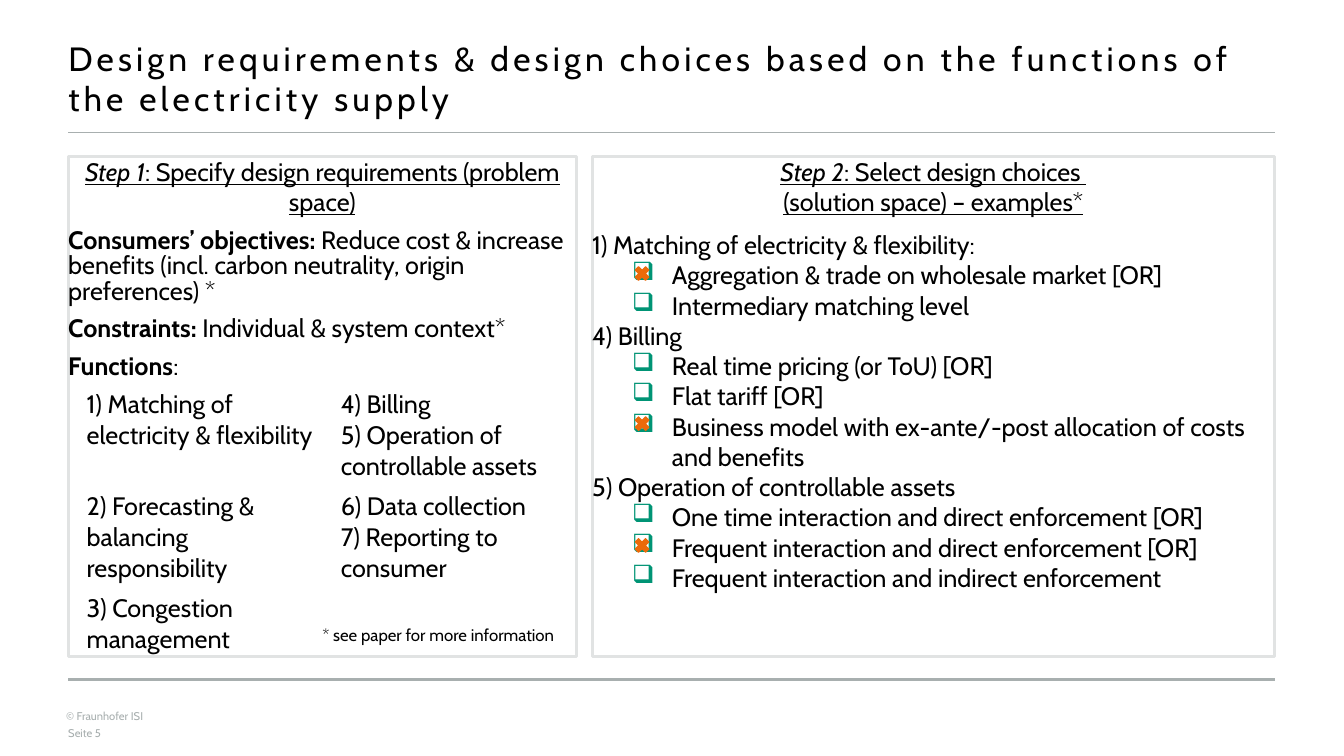
from lxml import etree
from pptx import Presentation
from pptx import util as u
from pptx.dml.color import RGBColor
from pptx.enum import shapes, text
from pptx.oxml import ns

PX = 9525
COLORS = {"ink": "000000", "grey": "A8AFAF", "frame": "E1E3E3",
          "white": "FFFFFF", "box": "009475", "cross": "EB6A0A"}
CENTER = text.PP_ALIGN.CENTER


class Board:
    """Hold the style and the current slide and draw each kind of element."""

    def __init__(self, slide, font="Cabin"):
        self.slide, self.font = slide, font

    def color(self, key):
        return RGBColor.from_string(COLORS[key])

    def place(self, *lengths):
        return [u.Emu(n * PX) for n in lengths]

    def frame(self, owner, anchor=text.MSO_ANCHOR.TOP):
        body = owner.text_frame
        body.word_wrap = True
        body.vertical_anchor = anchor
        body.margin_left = body.margin_top = body.margin_right = body.margin_bottom = 0
        return body

    def paragraph(self, body, runs, size=18, color="ink", align=text.PP_ALIGN.LEFT,
                  after=0, line=None, spacing=0, bullet=False):
        first = body.paragraphs[0]
        para = body.add_paragraph() if first.runs else first
        if bullet:
            self.checkbox(para)
        para.alignment = align
        if after:
            para.space_after = u.Pt(after)
        if line:
            para.line_spacing = u.Pt(line)
        for words, style in runs:
            for index, part in enumerate(words.split("\n")):
                if index:
                    para.add_line_break()
                run = para.add_run()
                run.text = part
                run.font.name, run.font.size = self.font, u.Pt(size)
                run.font.color.rgb = self.color(color)
                run.font.bold = "b" in style
                run.font.italic = "i" in style
                run.font.underline = "u" in style
                if spacing:
                    run.font._element.set("spc", str(spacing * 100))

    def checkbox(self, para):
        para.level = 1
        props = para._p.get_or_add_pPr()
        props.set("marL", str(76 * PX))
        props.set("indent", str(-38 * PX))
        tint = etree.SubElement(props, ns.qn("a:buClr"))
        etree.SubElement(tint, ns.qn("a:srgbClr")).set("val", COLORS["box"])
        etree.SubElement(props, ns.qn("a:buChar")).set("char", "❑")

    def label(self, area, words, anchor=text.MSO_ANCHOR.TOP, **style):
        box = self.slide.shapes.add_textbox(*self.place(*area))
        self.paragraph(self.frame(box, anchor), [(words, "")], **style)

    def rule(self, y, weight, left=65, right=1214):
        line = self.slide.shapes.add_connector(
            shapes.MSO_CONNECTOR.STRAIGHT, *self.place(left, y, right, y))
        line.line.color.rgb, line.line.width = self.color("grey"), u.Pt(weight)
        etree.SubElement(line._element.spPr, ns.qn("a:effectLst"))

    def shape(self, kind, area, fill, edge, weight):
        drawn = self.slide.shapes.add_shape(kind, *self.place(*area))
        drawn.shadow.inherit = False
        drawn.fill.solid()
        drawn.fill.fore_color.rgb = self.color(fill)
        drawn.line.color.rgb, drawn.line.width = self.color(edge), u.Pt(weight)
        return drawn

    def panel(self, area, step, heading):
        drawn = self.shape(shapes.MSO_SHAPE.RECTANGLE, area, "white", "frame", 2)
        body = self.frame(drawn)
        self.paragraph(body, [(step, "iu"), (heading, "u")], align=CENTER, after=9)
        return body

    def table(self, left, top, width, heights, rows):
        frame = self.slide.shapes.add_table(
            len(rows), len(rows[0]), *self.place(left, top, width, sum(heights)))
        grid = frame.table
        grid.first_row = grid.horz_banding = False
        style = grid._tbl.tblPr.find(ns.qn("a:tableStyleId"))
        style.text = "{2D5ABB26-0587-4C30-8999-92F81FD0307C}"
        for row, height, entries in zip(grid.rows, heights, rows):
            row.height = u.Emu(height * PX)
            for cell, lines in zip(row.cells, entries):
                cell.fill.background()
                for words in lines:
                    self.paragraph(cell.text_frame, [(words, "")])


REQUIREMENTS = [
    ("Consumers’ objectives: ",
     "Reduce cost & increase benefits (incl. carbon neutrality, origin preferences) *"),
    ("Constraints: ", "Individual & system context*"),
    ("Functions", ":"),
]
FUNCTIONS = [
    [["1) Matching of electricity & flexibility"],
     ["4) Billing", "5) Operation of controllable assets"]],
    [["2) Forecasting & balancing responsibility"],
     ["6) Data collection", "7) Reporting to consumer"]],
    [["3) Congestion management"], []],
]
CHOICES = {
    "1) Matching of electricity & flexibility:": [
        "Aggregation & trade on wholesale market [OR]",
        "Intermediary matching level"],
    "4) Billing": [
        "Real time pricing (or ToU) [OR]",
        "Flat tariff [OR]",
        "Business model with ex-ante/-post allocation of costs and benefits"],
    "5) Operation of controllable assets": [
        "One time interaction and direct enforcement [OR]",
        "Frequent interaction and direct enforcement [OR]",
        "Frequent interaction and indirect enforcement"],
}


def main():
    deck = Presentation()
    deck.slide_width, deck.slide_height = u.Emu(1280 * PX), u.Emu(720 * PX)
    board = Board(deck.slides.add_slide(deck.slide_layouts[6]))

    board.label((63, 676, 126, 12), "© Fraunhofer ISI", size=8, color="grey")
    board.rule(647, 2.5)
    board.rule(126, 1)
    board.label((65, 692, 252, 12), "Seite 5", size=8, color="grey")
    board.label((65, 36, 1149, 78),
                "Design requirements & design choices based on the functions of "
                "the electricity supply", size=24, spacing=3)

    problem = board.panel((65, 149, 484, 476), "Step 1",
                          ": Specify design requirements (problem space)")
    for topic, detail in REQUIREMENTS:
        board.paragraph(problem, [(topic, "b"), (detail, "")], after=9, line=18)
    board.table(73, 366, 484, [97, 97, 68], FUNCTIONS)
    board.label((270, 571, 295, 68), "* see paper for more information",
                anchor=text.MSO_ANCHOR.MIDDLE, size=12, align=CENTER, after=9)

    solution = board.panel((564, 149, 650, 476), "Step 2",
                           ": Select design choices \n(solution space) – examples*")
    for function, options in CHOICES.items():
        board.paragraph(solution, [(function, "")])
        for option in options:
            board.paragraph(solution, [(option, "")], bullet=True)
    for top in (251, 394, 510):
        board.shape(shapes.MSO_SHAPE.MATH_MULTIPLY, (602, top, 19, 19),
                    "cross", "cross", 0.75)

    deck.save("out.pptx")


if __name__ == "__main__":
    main()
